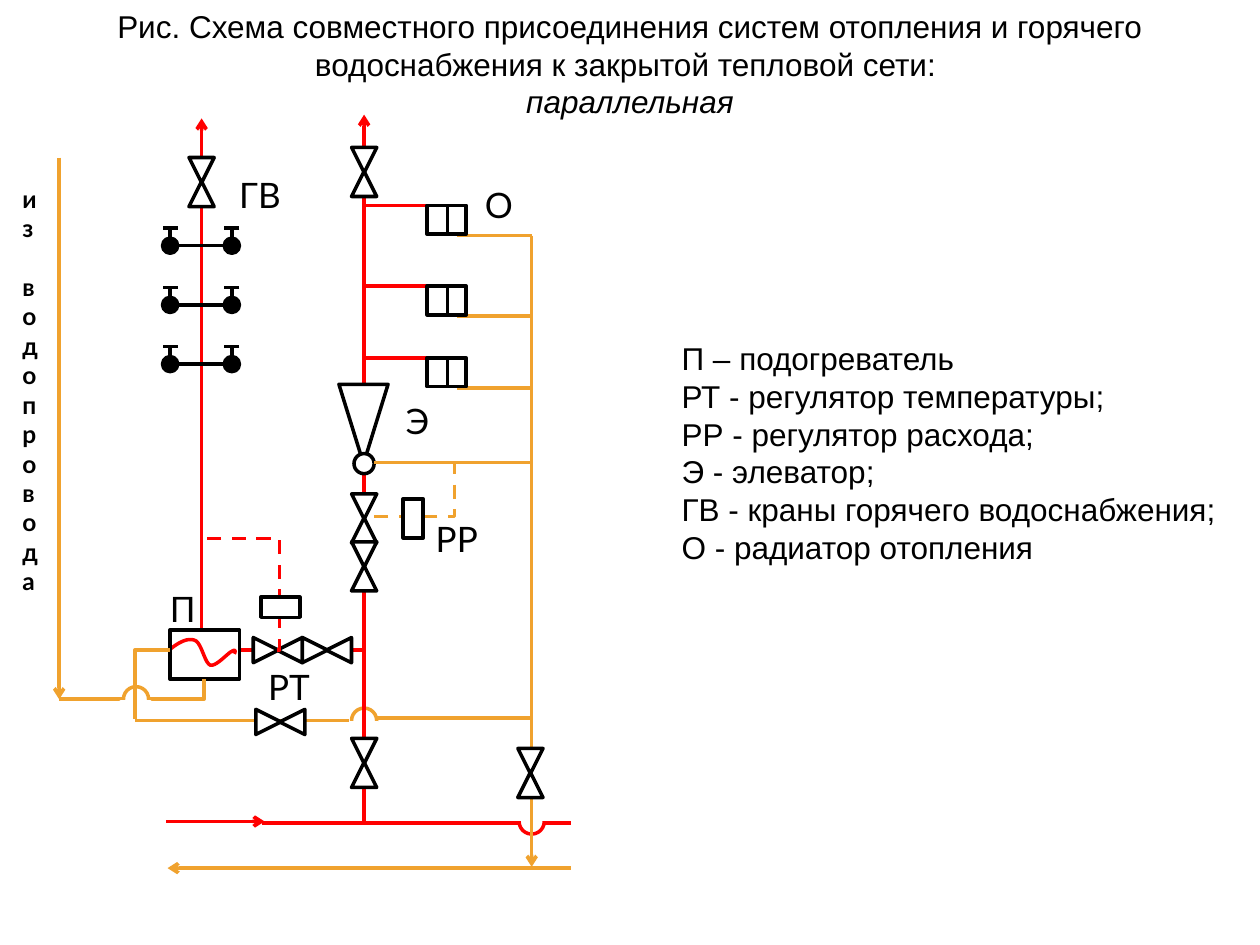
from dataclasses import dataclass
from typing import Any

from lxml import etree
from pptx import Presentation
from pptx.dml.color import RGBColor
from pptx.enum.dml import MSO_LINE
from pptx.enum.shapes import MSO_CONNECTOR, MSO_SHAPE
from pptx.enum.text import MSO_ANCHOR, MSO_AUTO_SIZE, PP_ALIGN
from pptx.oxml.ns import qn
from pptx.util import Cm, Pt

RED = RGBColor(0xFF, 0x00, 0x00)
ORANGE = RGBColor(0xF0, 0xA2, 0x2E)
BLACK = RGBColor(0x00, 0x00, 0x00)
WHITE = RGBColor(0xFF, 0xFF, 0xFF)
DASH = MSO_LINE.DASH
STRAIGHT, ELBOW = MSO_CONNECTOR.STRAIGHT, MSO_CONNECTOR.ELBOW
RECT, OVAL, TRIANGLE = MSO_SHAPE.RECTANGLE, MSO_SHAPE.OVAL, MSO_SHAPE.ISOSCELES_TRIANGLE
MIDDLE, TOP = MSO_ANCHOR.MIDDLE, MSO_ANCHOR.TOP
CENTER, LEFT = PP_ALIGN.CENTER, PP_ALIGN.LEFT
NO_FIT = MSO_AUTO_SIZE.NONE
GRID = 2.54
LINE_WIDTH = Pt(2)


def grid(value):
    """Convert grid units to a length."""
    return Cm(value * GRID)


def write(p, text, font="Arial", size=18, bold=False, italic=False, align=LEFT):
    """Put formatted text into a paragraph."""
    p.alignment = align
    p.space_before = Pt(0)
    r = p.add_run()
    r.text = text
    r.font.name, r.font.size = font, Pt(size)
    r.font.bold, r.font.italic = bold, italic
    r.font.color.rgb = BLACK


def stroke(sp, color, dash=None):
    """Give a shape or connector its line."""
    sp.line.color.rgb = color
    sp.line.width = LINE_WIDTH
    if dash:
        sp.line.dash_style = dash


@dataclass
class Region:
    """A part of the scheme, drawn relative to its top left corner."""

    shapes: Any
    left: float
    top: float

    def group(self, x, y):
        """Return a grouped region placed inside this one."""
        return Region(self.shapes.add_group_shape().shapes, self.left + x, self.top + y)

    def line(self, x1, y1, x2, y2, color, arrow=False, bend=None, adj=(), dash=None):
        """Draw a straight or bent connector."""
        ends = [grid(v) for v in (self.left + x1, self.top + y1, self.left + x2, self.top + y2)]
        c = self.shapes.add_connector(ELBOW if bend else STRAIGHT, *ends)
        stroke(c, color, dash)
        props = c._element.spPr
        if bend:
            geom = props.find(qn("a:prstGeom"))
            geom.set("prst", bend)
            guides = geom.get_or_add_avLst()
            for i, value in enumerate(adj, 1):
                etree.SubElement(guides, qn("a:gd"), name=f"adj{i}", fmla=f"val {value}")
        if arrow:
            etree.SubElement(c.line._get_or_add_ln(), qn("a:tailEnd"), type="arrow")
        etree.SubElement(props, qn("a:effectLst"))

    def shape(self, kind, x, y, w, h, color=BLACK, fill=WHITE, turn=0):
        """Draw a preset shape."""
        sp = self.shapes.add_shape(kind, grid(self.left + x), grid(self.top + y), grid(w), grid(h))
        sp.shadow.inherit = False
        sp.rotation = turn
        stroke(sp, color)
        if fill is None:
            sp.fill.background()
        else:
            sp.fill.solid()
            sp.fill.fore_color.rgb = fill

    def label(self, text, x, y, w=0.55, h=0.44, vert=None, **fmt):
        """Add a text label."""
        box = (self.left + x, self.top + y, w, h)
        tf = self.shapes.add_textbox(*(grid(v) for v in box)).text_frame
        tf.word_wrap = True
        if vert:
            tf._txBody.bodyPr.set("vert", vert)
        write(tf.paragraphs[0], text, **{"font": "Lato", "size": 20, **fmt})

    def valve(self, x, y, flat=False):
        """Draw a valve as two facing triangles."""
        g = self.group(x, y)
        g.shape(TRIANGLE, 0, 0, 0.2, 0.2, turn=90 if flat else 180)
        if flat:
            g.shape(TRIANGLE, 0.19, 0, 0.2, 0.2, turn=270)
        else:
            g.shape(TRIANGLE, 0, 0.19, 0.2, 0.2)

    def hop(self, x, y, color, below=False):
        """Draw a half ring where two pipes cross."""
        g = self.group(x, y)
        g.shape(OVAL, 0.02, 0, 0.2, 0.2, color)
        g.shape(RECT, 0, 0 if below else 0.12, 0.23, 0.08, WHITE)

    def radiator(self, x, y):
        """Draw a two-section radiator."""
        g = self.group(x, y)
        g.shape(RECT, 0, 0, 0.31, 0.23, fill=None)
        g.line(0.16, 0, 0.16, 0.23, BLACK)

    def taps(self, x, y):
        """Draw a pair of taps joined by a bar."""
        g = self.group(x, y)
        g.line(0.1, 0, 0.49, 0, BLACK)
        for dx in (0, 0.49):
            g.shape(OVAL, dx, -0.06, 0.12, 0.12, fill=BLACK)
            g.line(dx + 0.06, -0.13, dx + 0.06, -0.05, BLACK)
            g.line(dx + 0.12, -0.14, dx, -0.14, BLACK)

    def curve(self, start, segments, color, steps=10):
        """Draw an open line through cubic curve segments."""
        points = [start]
        for b, c, d in segments:
            a = points[-1]
            for t in (i / steps for i in range(1, steps + 1)):
                weights = ((1 - t) ** 3, 3 * t * (1 - t) ** 2, 3 * t * t * (1 - t), t ** 3)
                points.append(tuple(sum(k * p[n] for k, p in zip(weights, (a, b, c, d)))
                                    for n in (0, 1)))
        points = [(grid(self.left + x), grid(self.top + y)) for x, y in points]
        builder = self.shapes.build_freeform(*points[0])
        builder.add_line_segments(points[1:], close=False)
        sp = builder.convert_to_shape()
        sp.shadow.inherit = False
        sp.fill.background()
        stroke(sp, color)


def place_text(sp, box, paragraphs, anchor, **fmt):
    """Move a placeholder to a box and fill it with paragraphs."""
    sp.left, sp.top, sp.width, sp.height = (grid(v) for v in box)
    tf = sp.text_frame
    tf.word_wrap, tf.auto_size, tf.vertical_anchor = True, NO_FIT, anchor
    for i, (text, italic) in enumerate(paragraphs):
        p = tf.add_paragraph() if i else tf.paragraphs[0]
        props = p._p.get_or_add_pPr()
        props.set("marL", "0")
        props.set("indent", "0")
        etree.SubElement(props, qn("a:buNone"))
        write(p, text, italic=italic, **fmt)


def draw_mains(m):
    """Draw the supply and return mains."""
    m.line(0.76, 0.11, 3.21, 0.11, RED)
    m.line(0, 0.1, 0.78, 0.1, RED, arrow=True)
    m.line(3.21, 0.47, 0.01, 0.47, ORANGE, arrow=True)
    m.hop(2.78, 0, RED, below=True)


def draw_heating(h):
    """Draw the heating loop with elevator and radiators."""
    h.hop(0.08, 4.71, ORANGE)
    h.line(0.2, 5.63, 0.2, 0, RED, arrow=True)
    for y, end in ((0.72, 0.88), (1.36, 0.87), (1.93, 0.76)):
        h.line(end, y, 0.2, y, RED)
        h.line(1.53, y + 0.24, 0.94, y + 0.24, ORANGE)
        h.radiator(0.7, y)
    h.shape(TRIANGLE, 0, 2.14, 0.39, 0.63, turn=180)
    h.shape(OVAL, 0.12, 2.69, 0.16, 0.16)
    h.line(0.29, 4.79, 1.53, 4.79, ORANGE)
    h.line(1.53, 0.96, 1.53, 5.97, ORANGE, arrow=True)
    h.valve(1.42, 5.03)
    h.line(0.28, 2.76, 1.53, 2.76, ORANGE)
    h.line(0.9, 2.76, 0.2, 3.19, ORANGE, bend="bentConnector4", adj=(-2800, 100000), dash=DASH)
    h.shape(RECT, 0.51, 3.05, 0.16, 0.31)
    for y in (0.26, 3.01, 3.39, 4.95):
        h.valve(0.1, y)
    for text, x, y in (("РР", 0.67, 3.15), ("Э", 0.43, 2.21), ("О", 1.06, 0.5)):
        h.label(text, x, y)


def draw_hot_water(w):
    """Draw the hot water loop with heater and taps."""
    w.line(1.82, 4.22, 2.81, 4.22, RED)
    w.line(1.52, 4.06, 1.52, 0, RED, arrow=True)
    w.valve(1.42, 0.31)
    w.line(0.39, 0.31, 0.39, 4.61, ORANGE, arrow=True)
    w.label("из водопровода", 0, 0.47, 0.48, 4.14, vert="wordArtVert", size=14, bold=True)
    w.curve((1.25, 4.23), (((1.32, 4.17), (1.4, 4.12), (1.46, 4.14)),
                           ((1.52, 4.15), (1.54, 4.32), (1.59, 4.34)),
                           ((1.64, 4.35), (1.73, 4.24), (1.76, 4.23)),
                           ((1.79, 4.21), (1.79, 4.23), (1.78, 4.25))), RED)
    w.shape(RECT, 1.27, 4.06, 0.55, 0.39, fill=None)
    w.line(2.69, 4.78, 0.99, 4.78, ORANGE)
    w.line(0.39, 4.61, 1.54, 4.45, ORANGE, bend="bentConnector2")
    w.hop(0.88, 4.51, ORANGE)
    w.line(1.27, 4.22, 0.99, 4.77, ORANGE, bend="bentConnector2")
    for x, y in ((1.95, 4.69), (1.93, 4.12), (2.32, 4.12)):
        w.valve(x, y, flat=True)
    for row in range(3):
        w.taps(1.21, 1.01 + 0.47 * row)
    w.line(2.12, 4.22, 1.56, 3.36, RED, bend="bentConnector4", adj=(-3700, 103000), dash=DASH)
    w.shape(RECT, 1.99, 3.8, 0.31, 0.16)
    for text, x, y in (("РТ", 1.95, 4.29), ("П", 1.17, 3.67), ("ГВ", 1.72, 0.39)):
        w.label(text, x, y)


def main():
    """Build the slide and save it."""
    prs = Presentation()
    prs.slide_width, prs.slide_height = grid(10), grid(7.5)
    s = prs.slides.add_slide(prs.slide_layouts[1])
    title = (("Рис. Схема совместного присоединения систем отопления и горячего "
              "водоснабжения к закрытой тепловой сети: ", False), ("параллельная", True))
    legend = ("П – подогреватель", "РТ - регулятор температуры;", "РР - регулятор расхода;",
              "Э - элеватор;", "ГВ - краны горячего водоснабжения; О - радиатор отопления")
    place_text(s.shapes.title, (0, 0, 10, 1.01), title, MIDDLE, align=CENTER)
    place_text(s.placeholders[1], (5.31, 2.64, 4.69, 1.92), [(t, False) for t in legend], TOP)
    draw_mains(Region(s.shapes, 1.32, 6.42))
    draw_heating(Region(s.shapes, 2.69, 0.91))
    draw_hot_water(Region(s.shapes, 0.08, 0.94))
    prs.save("out.pptx")


if __name__ == "__main__":
    main()
